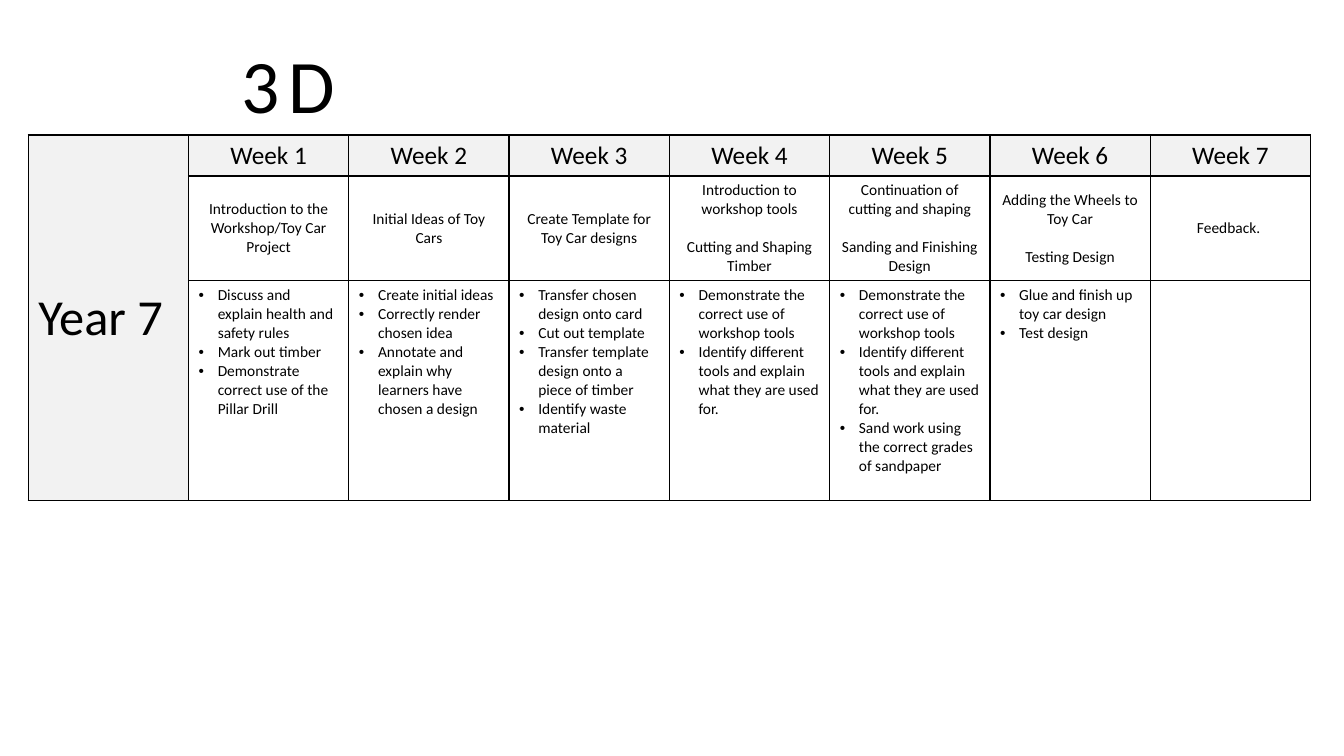
from lxml.etree import SubElement
from pptx import Presentation
from pptx.dml.color import RGBColor
from pptx.enum.text import MSO_ANCHOR, MSO_AUTO_SIZE, PP_ALIGN
from pptx.oxml import parse_xml
from pptx.oxml.ns import nsdecls, qn
from pptx.util import Inches, Pt


def paint(fill, color):
    fill.solid()
    fill.fore_color.rgb = RGBColor.from_string(color)


def write(frame, lines, size, align=PP_ALIGN.LEFT):
    frame.text = "\n".join(lines)
    for para in frame.paragraphs:
        para.alignment = align
        para.font.name = "Calibri"
        para.font.size = Pt(size)
        paint(para.font.fill, "000000")


weeks = [
    (["Introduction to the Workshop/Toy Car Project"],
     ["Discuss and explain health and safety rules", "Mark out timber",
      "Demonstrate correct use of the Pillar Drill"]),
    (["Initial Ideas of Toy Cars"],
     ["Create initial ideas", "Correctly render chosen idea",
      "Annotate and explain why learners have chosen a design"]),
    (["Create Template for Toy Car designs"],
     ["Transfer chosen design onto card", "Cut out template",
      "Transfer template design onto a piece of timber", "Identify waste material"]),
    (["Introduction to workshop tools", "Cutting and Shaping Timber"],
     ["Demonstrate the correct use of workshop tools",
      "Identify different tools and explain what they are used for."]),
    (["Continuation of cutting and shaping", "Sanding and Finishing Design"],
     ["Demonstrate the correct use of workshop tools",
      "Identify different tools and explain what they are used for.",
      "Sand work using the correct grades of sandpaper"]),
    (["Adding the Wheels to Toy Car", "Testing Design"],
     ["Glue and finish up toy car design", "Test design"]),
    (["Feedback. "], []),
]

deck = Presentation()
deck.slide_width = Inches(13.33)
deck.slide_height = Inches(7.5)
page = deck.slides.add_slide(deck.slide_layouts[5])

title = page.shapes.title
title.left, title.top = Inches(2.3), Inches(0.33)
title.width, title.height = Inches(6.75), Inches(1.01)
title.text_frame.auto_size = MSO_AUTO_SIZE.NONE
title.text_frame.vertical_anchor = MSO_ANCHOR.TOP
write(title.text_frame, ["3D"], 54)
title.text_frame.paragraphs[0].runs[0]._r.get_or_add_rPr().set("spc", "600")

row_heights = [0.4, 1.04, 2.18]
plan = page.shapes.add_table(3, 8, Inches(0.28), Inches(1.34),
                             Inches(12.72), Inches(sum(row_heights))).table
plan.first_row = False
plan.horz_banding = False
for column in plan.columns:
    column.width = Inches(1.59)
for row, height in zip(plan.rows, row_heights):
    row.height = Inches(height)

for row_index, row in enumerate(plan.rows):
    for column_index, cell in enumerate(row.cells):
        properties = cell._tc.get_or_add_tcPr()
        for side in ("a:lnL", "a:lnR", "a:lnT", "a:lnB"):
            border = SubElement(properties, qn(side), w=str(Pt(1)))
            line_fill = SubElement(border, qn("a:solidFill"))
            SubElement(line_fill, qn("a:srgbClr"), val="000000")
        paint(cell.fill, "F2F2F2" if row_index == 0 or column_index == 0 else "FFFFFF")

year = plan.cell(0, 0)
year.merge(plan.cell(2, 0))
year.vertical_anchor = MSO_ANCHOR.MIDDLE
write(year.text_frame, ["Year 7"], 36)

for number, (topics, tasks) in enumerate(weeks, 1):
    write(plan.cell(0, number).text_frame, [f"Week {number}"], 18, PP_ALIGN.CENTER)

    topic_cell = plan.cell(1, number)
    topic_cell.vertical_anchor = MSO_ANCHOR.MIDDLE
    write(topic_cell.text_frame, topics, 11, PP_ALIGN.CENTER)
    for para in topic_cell.text_frame.paragraphs[1:]:
        para.space_before = Pt(13.4)

    task_frame = plan.cell(2, number).text_frame
    write(task_frame, tasks, 11)
    if tasks:
        for para in task_frame.paragraphs:
            settings = para._p.get_or_add_pPr()
            settings.set("marL", str(Inches(0.19)))
            settings.set("indent", str(Inches(-0.19)))
            settings.insert(0, parse_xml(f'<a:buChar {nsdecls("a")} char="•"/>'))
            settings.insert(0, parse_xml(f'<a:buFont {nsdecls("a")} typeface="Arial"/>'))

deck.save("out.pptx")
